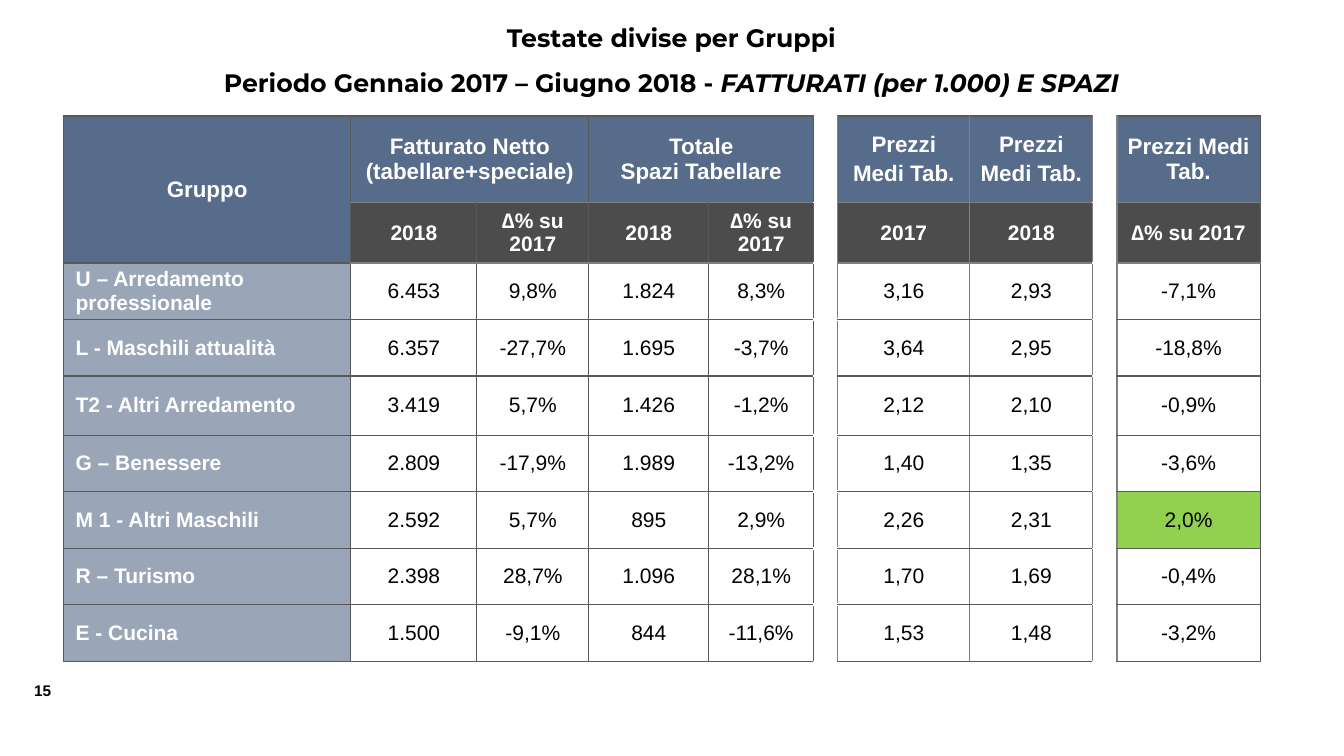
from lxml import etree
from pptx import Presentation
from pptx import util as u
from pptx.dml.color import RGBColor
from pptx.enum import text as t
from pptx.oxml.ns import qn

# Content
TITLE = [[("Testate divise per Gruppi\vPeriodo Gennaio 2017 – Giugno 2018 - ", False),
          ("FATTURATI (per 1.000) E SPAZI", True)]]
PAGE_NUMBER = "15"
# Column: (paragraphs, columns spanned, rows spanned)
HEADINGS = {
    0: (["Gruppo"], 1, 2),
    1: (["Fatturato Netto (tabellare+speciale)"], 2, 1),
    3: (["Totale", "Spazi Tabellare"], 2, 1),
    6: (["Prezzi", "Medi Tab."], 1, 1),
    7: (["Prezzi", "Medi Tab."], 1, 1),
    9: (["Prezzi Medi Tab."], 1, 1),
}
YEARS = ["", "2018", "∆% su 2017", "2018", "∆% su 2017", "", "2017", "2018", "", "∆% su 2017"]
GROUPS = [
    ("U – Arredamento\vprofessionale", "6.453", "9,8%", "1.824", "8,3%", "", "3,16", "2,93", "", "-7,1%"),
    ("L - Maschili attualità", "6.357", "-27,7%", "1.695", "-3,7%", "", "3,64", "2,95", "", "-18,8%"),
    ("T2 - Altri Arredamento", "3.419", "5,7%", "1.426", "-1,2%", "", "2,12", "2,10", "", "-0,9%"),
    ("G – Benessere", "2.809", "-17,9%", "1.989", "-13,2%", "", "1,40", "1,35", "", "-3,6%"),
    ("M 1 - Altri Maschili", "2.592", "5,7%", "895", "2,9%", "", "2,26", "2,31", "", "2,0%"),
    ("R – Turismo", "2.398", "28,7%", "1.096", "28,1%", "", "1,70", "1,69", "", "-0,4%"),
    ("E - Cucina", "1.500", "-9,1%", "844", "-11,6%", "", "1,53", "1,48", "", "-3,2%"),
]
HIGHLIGHT = (6, 9)

# Layout, 100 px to the inch
PX = 9144
SLIDE = (1333, 750)
TITLE_BOX = (111, 2, 1110, 107)
NUMBER_BOX = (24, 671, 42, 29)
TABLE_AT = (63, 115)
COLUMNS = [285, 125, 111, 119, 104, 24, 131, 122, 24, 142]
ROWS = [86, 60, 56, 56, 59, 56, 56, 56, 56]
GAPS = (5, 8)

BLACK = RGBColor(0, 0, 0)
WHITE = RGBColor(255, 255, 255)
BLUE = RGBColor(0x57, 0x6B, 0x8A)
GREEN = RGBColor(0x92, 0xD0, 0x50)
DARK = RGBColor(0x59, 0x59, 0x59)
GREY = RGBColor(0x80, 0x80, 0x80)


def px(values):
    return [u.Emu(value * PX) for value in values]


def put_text(frame, paragraphs, size=15, font="Arial", color=BLACK, bold=False,
             align=t.PP_ALIGN.CENTER, line=None, gap=0):
    """Fill a frame; a paragraph is a string or a list of (text, italic)."""
    for index, spans in enumerate(paragraphs):
        para = frame.add_paragraph() if index else frame.paragraphs[0]
        para.alignment = align
        if line:
            para.line_spacing = line
        if index and gap:
            para.space_before = u.Pt(gap)
        for words, italic in [(spans, False)] if isinstance(spans, str) else spans:
            for number, part in enumerate(words.split("\v")):
                if number:
                    para.add_line_break()
                span = para.add_run()
                span.text = part
                span.font.size, span.font.name = u.Pt(size), font
                span.font.bold, span.font.italic = bold, italic
                span.font.color.rgb = color


def paint(cell, color, opacity=100):
    if color is None:
        cell.fill.background()
        return
    cell.fill.solid()
    cell.fill.fore_color.rgb = color
    if opacity < 100:
        tone = cell.fill._xPr.find(qn("a:solidFill"))[0]
        etree.SubElement(tone, qn("a:alpha"), val=str(opacity * 1000))


def row_line(edge, column):
    """Colour and width of the horizontal line above row `edge`."""
    if column in GAPS:
        return WHITE, 2.25 if column == GAPS[0] and 3 <= edge <= 8 else 1
    return (GREY if edge in (1, 2) and column else DARK), 1


def column_line(edge):
    return (GREY if GAPS[0] < edge < len(COLUMNS) else DARK), 1


def add_borders(cell, row, column):
    borders = [("a:lnL", column_line(column)), ("a:lnR", column_line(column + 1)),
               ("a:lnT", row_line(row, column)), ("a:lnB", row_line(row + 1, column))]
    properties = cell._tc.get_or_add_tcPr()
    for place, (tag, (color, width)) in enumerate(borders):
        border = etree.Element(qn(tag), w=str(u.Pt(width)))
        fill = etree.SubElement(border, qn("a:solidFill"))
        etree.SubElement(fill, qn("a:srgbClr"), val=str(color))
        properties.insert(place, border)


def fill_cell(cell, row, column):
    cell.vertical_anchor = t.MSO_ANCHOR.MIDDLE
    if row > 1:
        cell.margin_left = u.Emu(0 if column else 12 * PX)
        cell.margin_right = cell.margin_top = cell.margin_bottom = 0
    frame = cell.text_frame
    if column in GAPS:
        paint(cell, WHITE)
    elif row == 0 or (row == 1 and column == 0):
        paint(cell, BLUE)
        if row == 0 and column in HEADINGS:
            put_text(frame, HEADINGS[column][0], size=16, color=WHITE, bold=True,
                     gap=3 if column > GAPS[0] else 0)
    elif row == 1:
        paint(cell, BLACK, 70)
        put_text(frame, [YEARS[column]], color=WHITE, bold=True)
    elif column == 0:
        paint(cell, BLUE, 60)
        put_text(frame, [GROUPS[row - 2][0]], color=WHITE, bold=True, align=t.PP_ALIGN.LEFT)
    else:
        paint(cell, GREEN if (row, column) == HIGHLIGHT else None)
        put_text(frame, [GROUPS[row - 2][column]])
    add_borders(cell, row, column)


def main():
    deck = Presentation()
    deck.slide_width, deck.slide_height = px(SLIDE)
    page = deck.slides.add_slide(deck.slide_layouts[5])

    # Title
    title = page.shapes.title
    title.left, title.top, title.width, title.height = px(TITLE_BOX)
    title.text_frame.auto_size = t.MSO_AUTO_SIZE.NONE
    title.text_frame.vertical_anchor = t.MSO_ANCHOR.TOP
    put_text(title.text_frame, TITLE, size=18, font="Montserrat", bold=True, line=1.5)

    # Table
    frame = page.shapes.add_table(len(ROWS), len(COLUMNS),
                                  *px((*TABLE_AT, sum(COLUMNS), sum(ROWS))))
    table = frame.table
    table.first_row = table.horz_banding = False
    for column, width in zip(table.columns, px(COLUMNS)):
        column.width = width
    for row, height in zip(table.rows, px(ROWS)):
        row.height = height
    for column, (_, wide, high) in HEADINGS.items():
        if wide * high > 1:
            table.cell(0, column).merge(table.cell(high - 1, column + wide - 1))
    for row in range(len(ROWS)):
        for column in range(len(COLUMNS)):
            fill_cell(table.cell(row, column), row, column)

    # Page number
    box = page.shapes.add_textbox(*px(NUMBER_BOX))
    box.text_frame.word_wrap = False
    put_text(box.text_frame, [PAGE_NUMBER], size=11, bold=True, align=t.PP_ALIGN.LEFT)

    deck.save("out.pptx")


if __name__ == "__main__":
    main()
